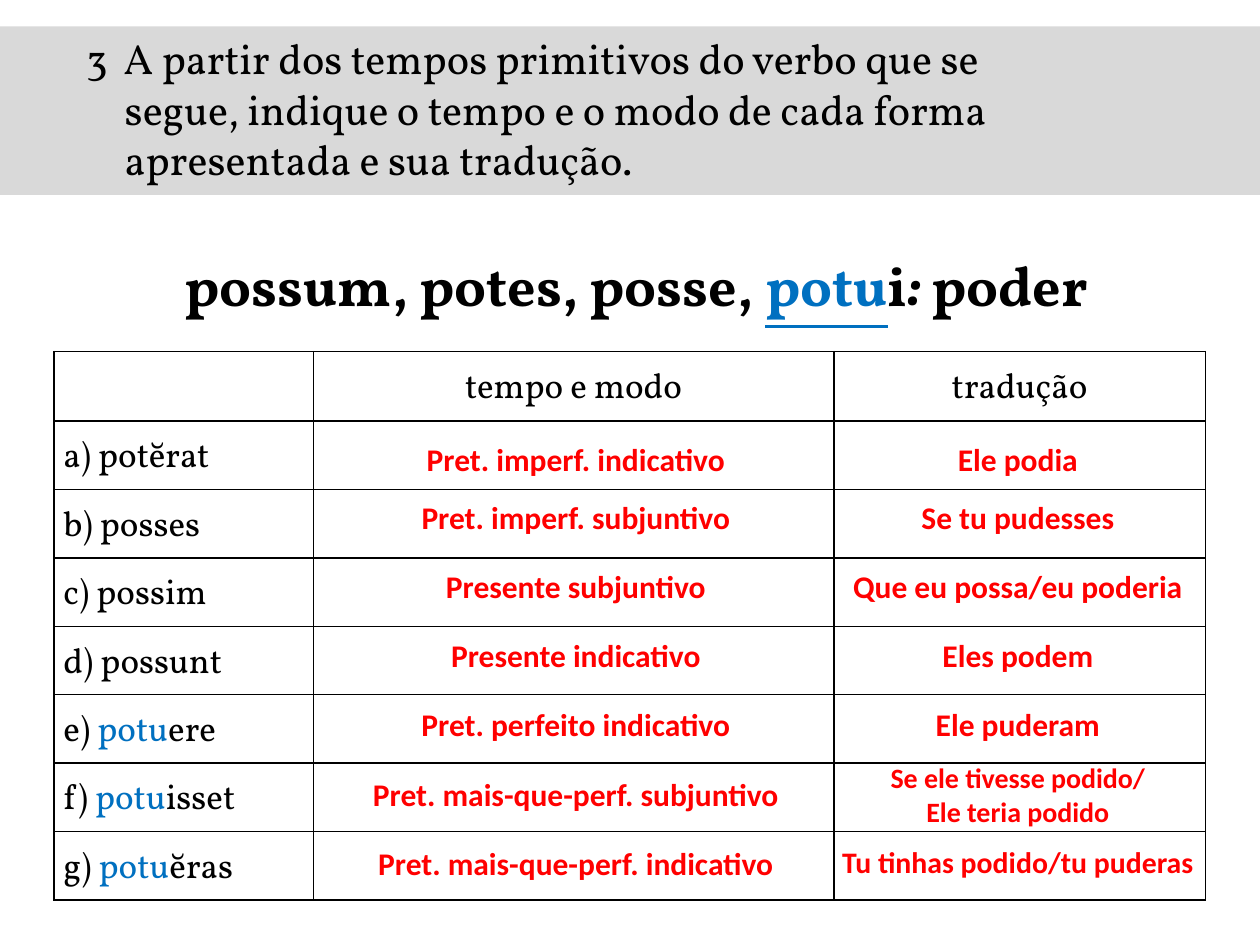
from dataclasses import dataclass

from lxml import etree
from pptx import Presentation
from pptx.dml.color import RGBColor
from pptx.enum.text import MSO_ANCHOR, MSO_AUTO_SIZE, PP_ALIGN
from pptx.oxml.ns import qn
from pptx.util import Cm, Pt

LEFT, CENTER = PP_ALIGN.LEFT, PP_ALIGN.CENTER
TOP, MIDDLE = MSO_ANCHOR.TOP, MSO_ANCHOR.MIDDLE
NO_AUTOFIT = MSO_AUTO_SIZE.NONE

SERIF, SANS = "Vollkorn", "Calibri"
BLACK, BLUE, RED, GRAY = "000000", "0070C0", "FF0000", "D9D9D9"

STEM = "potu"
INSTRUCTION = (
    "A partir dos tempos primitivos do verbo que se",
    "segue, indique o tempo e o modo de cada forma",
    "apresentada e sua tradução.",
)
HEADERS = ("", "tempo e modo", "tradução")
COLUMN_WIDTHS = (5.23, 10.49, 7.49)
HEADER_HEIGHT, ROW_HEIGHT = 1.4, 1.38
FIRST_ANSWER_TOP, SECOND_ANSWER_TOP, ANSWER_STEP = 8.74, 9.91, 1.395
TENSE_CENTER, TENSE_WIDTH = 11.61, 10.21
TRANSLATION_CENTER = 20.52


@dataclass
class VerbForm:
    label: str
    ending: str
    tense: str
    translation: str
    from_perfect: bool = False
    size: float = 18
    width: float = 7.26
    rise: float = 0


FORMS = (
    VerbForm("a) ", "potĕrat", "Pret. imperf. indicativo", "Ele podia"),
    VerbForm("b) ", "posses", "Pret. imperf. subjuntivo", "Se tu pudesses"),
    VerbForm("c) ", "possim", "Presente subjuntivo", "Que eu possa/eu poderia"),
    VerbForm("d) ", "possunt", "Presente indicativo", "Eles podem"),
    VerbForm("e) ", "ere", "Pret. perfeito indicativo", "Ele puderam", True),
    VerbForm("f) ", "isset", "Pret. mais-que-perf. subjuntivo",
             "Se ele tivesse podido/\nEle teria podido", True, size=16, rise=0.28),
    VerbForm("g) ", "ĕras", "Pret. mais-que-perf. indicativo",
             "Tu tinhas podido/tu puderas", True, size=17, width=7.6),
)


def rgb(color: str) -> RGBColor:
    return RGBColor.from_string(color)


def add_run(paragraph, text: str, *, size: float, font: str = SERIF, color: str = BLACK,
            bold: bool = False, italic: bool = False, underline: bool = False) -> None:
    run = paragraph.add_run()
    run.text = text
    style = run.font
    style.size, style.name = Pt(size), font
    style.bold, style.italic, style.underline = bold, italic, underline
    style.color.rgb = rgb(color)


def add_text_frame(slide, left: float, top: float, width: float, height: float):
    frame = slide.shapes.add_textbox(Cm(left), Cm(top), Cm(width), Cm(height)).text_frame
    frame.word_wrap = True
    return frame


def add_instruction(slide) -> None:
    title = slide.shapes.title
    title.left, title.top, title.width, title.height = Cm(0), Cm(0.53), Cm(25.4), Cm(3.4)
    title.fill.solid()
    title.fill.fore_color.rgb = rgb(GRAY)
    frame = title.text_frame
    frame.auto_size, frame.vertical_anchor, frame.word_wrap = NO_AUTOFIT, TOP, True
    for index, line in enumerate(INSTRUCTION):
        paragraph = frame.add_paragraph() if index else frame.paragraphs[0]
        paragraph.alignment = LEFT
        paragraph.space_before = Pt(0)
        add_run(paragraph, line, size=24.1)
        properties = paragraph._p.get_or_add_pPr()
        margin, indent = (1.5, 0.76) if index else (2.24, -0.76)
        properties.set("marL", str(Cm(margin)))
        properties.set("indent", str(Cm(indent)))
        if index == 0:
            etree.SubElement(properties, qn("a:buFont"), typeface="+mj-lt")
            etree.SubElement(properties, qn("a:buAutoNum"), type="arabicPlain", startAt="3")


def add_principal_parts(slide) -> None:
    paragraph = add_text_frame(slide, 1.5, 4.93, 22.66, 1.6).paragraphs[0]
    paragraph.alignment = CENTER
    paragraph.space_before = Pt(3)
    add_run(paragraph, "possum, potes, posse, ", size=32, bold=True)
    add_run(paragraph, STEM, size=32, bold=True, color=BLUE, underline=True)
    add_run(paragraph, "i", size=32, bold=True)
    add_run(paragraph, ": ", size=32, bold=True, italic=True)
    add_run(paragraph, "poder", size=32, bold=True)


def format_cell(cell) -> None:
    """Give the cell thin black borders, no fill and narrow margins."""
    properties = cell._tc.get_or_add_tcPr()
    for side in ("a:lnL", "a:lnR", "a:lnT", "a:lnB"):
        border = etree.SubElement(properties, qn(side), w=str(Pt(1)))
        fill = etree.SubElement(border, qn("a:solidFill"))
        etree.SubElement(fill, qn("a:srgbClr"), val=BLACK)
    cell.fill.background()
    cell.vertical_anchor = MIDDLE
    cell.margin_left = cell.margin_right = Cm(0.19)
    cell.margin_top = cell.margin_bottom = Cm(0)
    cell.text_frame.paragraphs[0].line_spacing = 1.15


def add_forms_table(slide) -> None:
    height = HEADER_HEIGHT + ROW_HEIGHT * len(FORMS)
    table = slide.shapes.add_table(
        len(FORMS) + 1, len(HEADERS), Cm(1.09), Cm(7.09),
        Cm(sum(COLUMN_WIDTHS)), Cm(height)).table
    table.first_row = table.horz_banding = False
    for column, width in zip(table.columns, COLUMN_WIDTHS):
        column.width = Cm(width)
    for index, row in enumerate(table.rows):
        row.height = Cm(ROW_HEIGHT if index else HEADER_HEIGHT)
    for cell in table.iter_cells():
        format_cell(cell)
    for column, header in enumerate(HEADERS):
        if header:
            paragraph = table.cell(0, column).text_frame.paragraphs[0]
            paragraph.alignment = CENTER
            add_run(paragraph, header, size=20)
    for row, form in enumerate(FORMS, start=1):
        paragraph = table.cell(row, 0).text_frame.paragraphs[0]
        add_run(paragraph, form.label, size=20)
        if form.from_perfect:
            add_run(paragraph, STEM, size=20, color=BLUE)
        add_run(paragraph, form.ending, size=20)


def add_answer(slide, text: str, center: float, top: float, width: float,
               size: float = 18) -> None:
    lines = text.split("\n")
    height = 1.02 if len(lines) == 1 else 1.63
    frame = add_text_frame(slide, center - width / 2, top, width, height)
    for index, line in enumerate(lines):
        paragraph = frame.add_paragraph() if index else frame.paragraphs[0]
        paragraph.alignment = CENTER
        add_run(paragraph, line, size=size, font=SANS, color=RED, bold=True)


def main() -> None:
    presentation = Presentation()
    presentation.slide_width, presentation.slide_height = Cm(25.4), Cm(19.05)
    title_only = presentation.slide_layouts[5]
    slide = presentation.slides.add_slide(title_only)
    add_instruction(slide)
    add_principal_parts(slide)
    add_forms_table(slide)
    for index, form in enumerate(FORMS):
        top = SECOND_ANSWER_TOP + ANSWER_STEP * (index - 1) if index else FIRST_ANSWER_TOP
        add_answer(slide, form.tense, TENSE_CENTER, top, TENSE_WIDTH)
        add_answer(slide, form.translation, TRANSLATION_CENTER, top - form.rise,
                   form.width, form.size)
    presentation.save("out.pptx")


if __name__ == "__main__":
    main()
